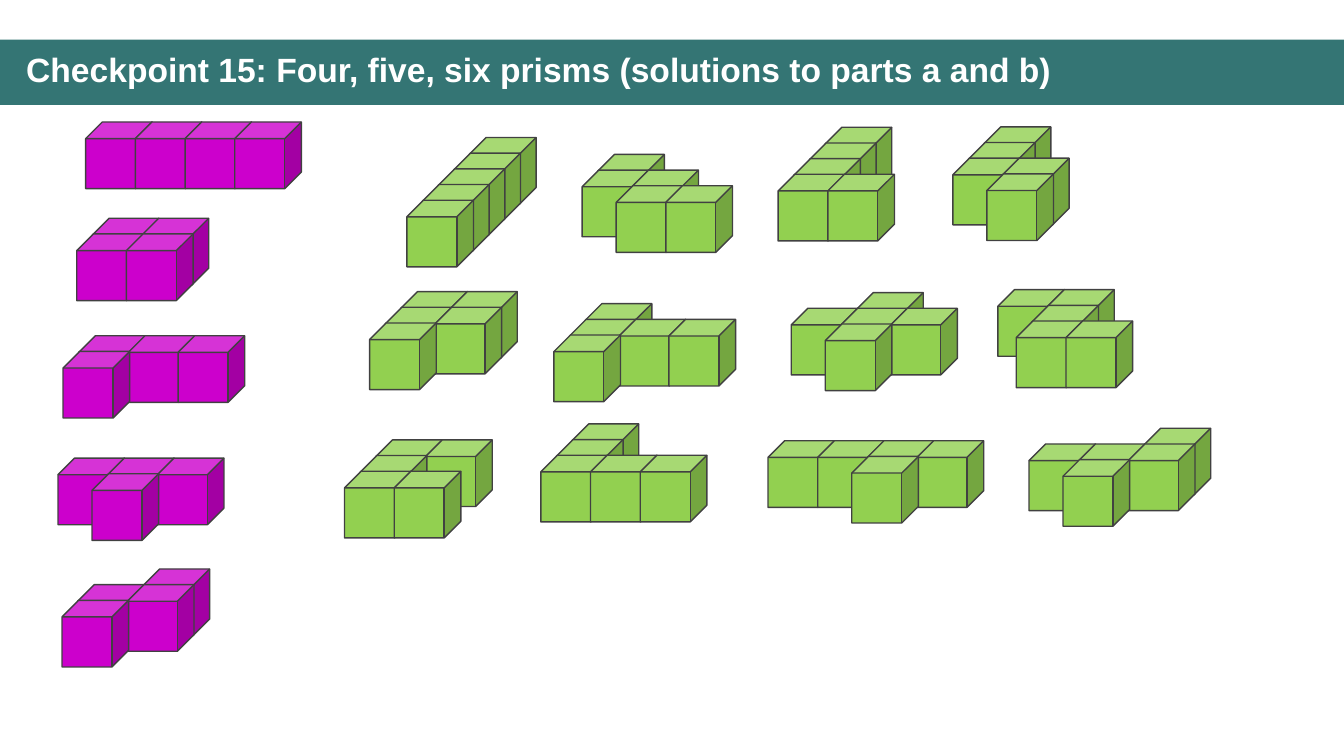
from pptx import Presentation
from pptx.dml.color import RGBColor
from pptx.enum.shapes import MSO_SHAPE
from pptx.enum.text import MSO_ANCHOR, MSO_AUTO_SIZE, PP_ALIGN
from pptx.util import Pt

RECTANGLE, CUBE = MSO_SHAPE.RECTANGLE, MSO_SHAPE.CUBE
MIDDLE, LEFT = MSO_ANCHOR.MIDDLE, PP_ALIGN.LEFT
NO_AUTOFIT = MSO_AUTO_SIZE.NONE

TEAL = RGBColor(0x34, 0x75, 0x74)
WHITE = RGBColor(0xFF, 0xFF, 0xFF)
MAGENTA = RGBColor(0xCC, 0x00, 0xCC)
GREEN = RGBColor(0x92, 0xD0, 0x50)
OUTLINE = RGBColor(0x41, 0x41, 0x41)

SLIDE_WIDTH, SLIDE_HEIGHT = 960, 540
CUBE_SIZE = 47.6
COLUMN_STEP = 35.5  # one cube to the right
DEPTH_STEP = 11.2   # one cube towards the viewer: left and down

# Each prism: left and top of its back-left cell, then its plan
# from the back row to the front row ("#" is a cube)
FOUR_CUBE_PRISMS = [
    (61.2, 87.1, "####"),
    (66, 155.9, "## ##"),
    (56.2, 239.8, "### #"),
    (41.4, 327.2, "### .#"),
    (66.7, 406.4, ".# ## #"),
]
FIVE_CUBE_PRISMS = [
    (335.4, 98.2, "# # # # #"),
    (427, 110.3, "# ## .##"),
    (589.4, 90.9, "# # # ##"),
    (703, 90.6, "# # ## .#"),
    (286.4, 208.3, "## ## #"),
    (418, 216.9, "# ### #"),
    (576.4, 209, ".# ### .#"),
    (712.8, 206.9, "## .# .##"),
    (268.5, 314.2, "## # ##"),
    (408.7, 302.8, "# # ###"),
    (548.6, 314.8, "#### ..#"),
    (746.2, 305.9, "..# ### .#"),
]


class SlideBuilder:
    font_name = "Arial"
    title_size = 24
    line_width = 1

    def __init__(self, presentation):
        self.slide = presentation.slides.add_slide(presentation.slide_layouts[5])

    def title(self, text, left, top, width, height):
        title = self.slide.shapes.title
        title.left, title.top = Pt(left), Pt(top)
        title.width, title.height = Pt(width), Pt(height)
        frame = title.text_frame
        frame.text = text
        frame.word_wrap = True
        frame.auto_size = NO_AUTOFIT
        frame.vertical_anchor = MIDDLE
        paragraph = frame.paragraphs[0]
        paragraph.alignment = LEFT
        paragraph.line_spacing = 0.9
        font = paragraph.runs[0].font
        font.name, font.size, font.bold = self.font_name, Pt(self.title_size), True
        font.color.rgb = WHITE

    def shape(self, shapes, kind, left, top, width, height, fill, line=None):
        shape = shapes.add_shape(kind, Pt(left), Pt(top), Pt(width), Pt(height))
        shape.shadow.inherit = False
        shape.fill.solid()
        shape.fill.fore_color.rgb = fill
        if line is None:
            shape.line.fill.background()
        else:
            shape.line.color.rgb = line
            shape.line.width = Pt(self.line_width)
        return shape

    def banner(self, top, height):
        banner = self.shape(self.slide.shapes, RECTANGLE, 0, top, SLIDE_WIDTH, height, TEAL)
        # Keep the banner behind the title
        self.slide.shapes.title.element.addprevious(banner.element)

    def prism(self, left, top, plan, fill):
        shapes = self.slide.shapes.add_group_shape().shapes
        for row, cells in enumerate(plan.split()):
            for column, cell in enumerate(cells):
                if cell == "#":
                    x = left + column * COLUMN_STEP - row * DEPTH_STEP
                    y = top + row * DEPTH_STEP
                    self.shape(shapes, CUBE, x, y, CUBE_SIZE, CUBE_SIZE, fill, OUTLINE)


def main():
    presentation = Presentation()
    presentation.slide_width, presentation.slide_height = Pt(SLIDE_WIDTH), Pt(SLIDE_HEIGHT)
    builder = SlideBuilder(presentation)

    # Heading
    builder.banner(28.3, 46.7)
    builder.title("Checkpoint 15: Four, five, six prisms (solutions to parts a and b)",
                  11.5, 34.2, 939, 34)

    # Solutions, one group per prism
    for prisms, fill in ((FOUR_CUBE_PRISMS, MAGENTA), (FIVE_CUBE_PRISMS, GREEN)):
        for left, top, plan in prisms:
            builder.prism(left, top, plan, fill)

    presentation.save("out.pptx")


if __name__ == "__main__":
    main()
